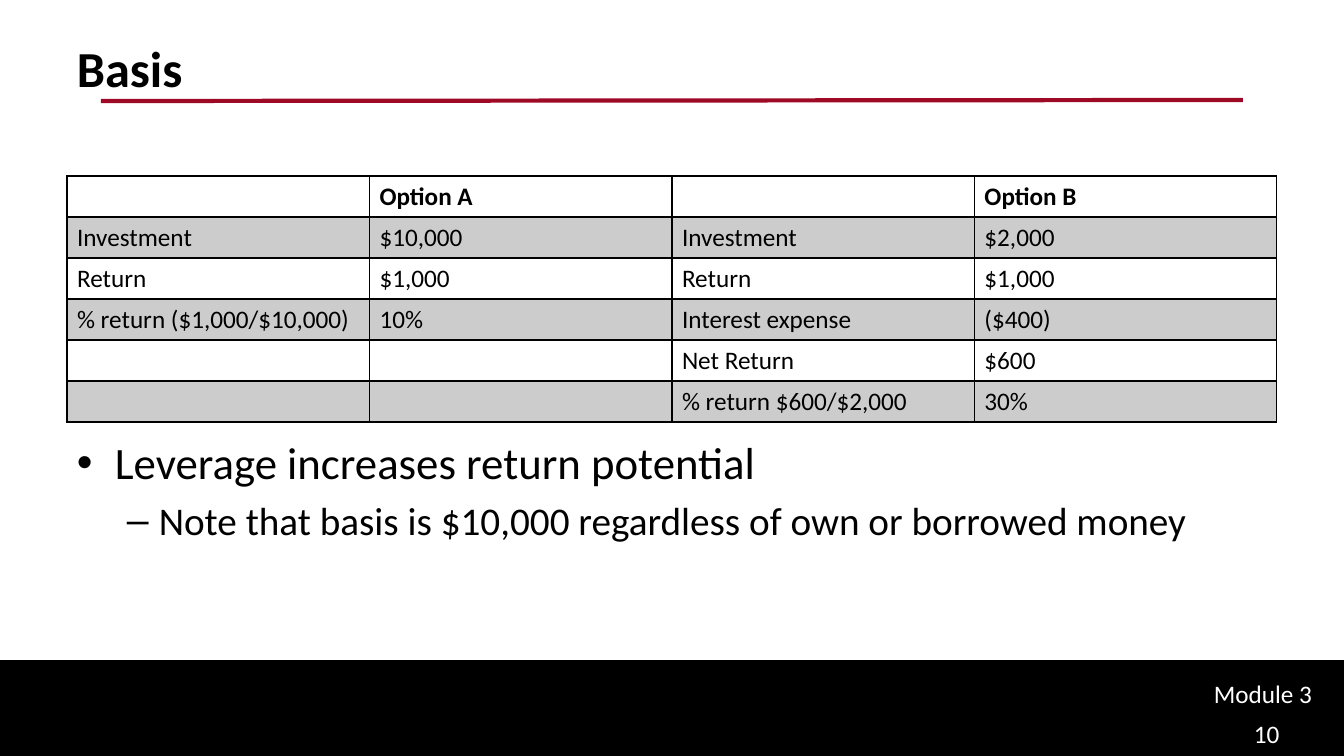
from lxml.etree import SubElement
from pptx import Presentation
from pptx.dml.color import RGBColor
from pptx.enum.shapes import MSO_CONNECTOR, MSO_SHAPE
from pptx.oxml.ns import qn
from pptx.util import Emu, Pt

EMU_PER_PX = 914400 / 100.8
BLACK = RGBColor(0x00, 0x00, 0x00)
WHITE = RGBColor(0xFF, 0xFF, 0xFF)
CRIMSON = RGBColor(0x9E, 0x09, 0x26)


def px(*lengths):
    """Turn px lengths into a list of EMU lengths."""
    return [Emu(round(length * EMU_PER_PX)) for length in lengths]


def write(paragraph, text, size, color=BLACK, bold=False):
    run = paragraph.add_run()
    run.text = text
    style = {"name": "Calibri", "size": Pt(size), "bold": bold}
    for attribute, value in style.items():
        setattr(run.font, attribute, value)
    run.font.color.rgb = color


deck = Presentation()
deck.slide_width, deck.slide_height = px(1344, 756)
slide = deck.slides.add_slide(deck.slide_layouts[6])
shapes = slide.shapes

# Footer band and rule under the title
footer = shapes.add_shape(MSO_SHAPE.RECTANGLE, *px(0, 661, 1344, 95))
footer.shadow.inherit = False
footer.fill.solid()
footer.fill.fore_color.rgb = BLACK
footer.line.color.rgb = BLACK
footer.line.width = Pt(2)

title_rule = shapes.add_connector(MSO_CONNECTOR.STRAIGHT, *px(101, 101, 1243, 100))
title_rule.line.color.rgb = CRIMSON
title_rule.line.width = Pt(3)
SubElement(title_rule._element.spPr, qn("a:effectLst"))

# Title, module name and page number
labels = [
    ("Basis", (67, 32, 1210, 126), 36, BLACK, True),
    ("Module 3", (1204, 673, 133, 40), 18, WHITE, False),
    ("10", (1244, 713, 92, 43), 18, WHITE, False),
]
for text, place, size, color, bold in labels:
    frame = shapes.add_textbox(*px(*place)).text_frame
    frame.word_wrap = True
    write(frame.paragraphs[0], text, size, color, bold)

# Conclusion bullets: text, size, level, bullet, left margin, hanging indent
conclusions = [
    ("Leverage increases return potential", 32, 0, "•", 38, 38),
    ("Note that basis is $10,000 regardless of own or borrowed money",
     28, 1, "–", 82, 32),
]
body = shapes.add_textbox(*px(67, 430, 1210, 179)).text_frame
body.word_wrap = True
for index, (text, size, level, bullet, margin, hanging) in enumerate(conclusions):
    paragraph = body.add_paragraph() if index else body.paragraphs[0]
    paragraph.level = level
    properties = paragraph._p.get_or_add_pPr()
    for name, length in zip(("marL", "indent"), px(margin, -hanging)):
        properties.set(name, str(length))
    SubElement(properties, qn("a:buFont"), typeface="Arial")
    SubElement(properties, qn("a:buChar"), char=bullet)
    if index:
        paragraph.space_before = Pt(size * 0.2)
    write(paragraph, text, size)

# Comparison of the two options
options = [
    ("", "Option A", "", "Option B"),
    ("Investment", "$10,000", "Investment", "$2,000"),
    ("Return", "$1,000", "Return", "$1,000"),
    ("% return ($1,000/$10,000)", "10%", "Interest expense", "($400)"),
    ("", "", "Net Return", "$600"),
    ("", "", "% return $600/$2,000", "30%"),
]
comparison = shapes.add_table(len(options), 4, *px(67, 176, 1210, 246)).table
comparison.first_row = False
comparison.horz_banding = False
for row in comparison.rows:
    row.height = px(41)[0]
for r, texts in enumerate(options):
    for c, text in enumerate(texts):
        cell = comparison.cell(r, c)
        cell_properties = cell._tc.get_or_add_tcPr()
        for side in "LRTB":
            heavy = (r, side) in ((0, "B"), (1, "T"))
            border = SubElement(cell_properties, qn(f"a:ln{side}"),
                                w=str(Pt(2 if heavy else 1)))
            border_fill = SubElement(border, qn("a:solidFill"))
            SubElement(border_fill, qn("a:srgbClr"), val=str(BLACK))
        if r % 2:
            cell.fill.solid()
            cell.fill.fore_color.rgb = BLACK
            shade = cell_properties.find(qn("a:solidFill")).find(qn("a:srgbClr"))
            SubElement(shade, qn("a:alpha"), val="20000")
        else:
            cell.fill.background()
        if text:
            write(cell.text_frame.paragraphs[0], text, 18, bold=r == 0)

deck.save("out.pptx")
